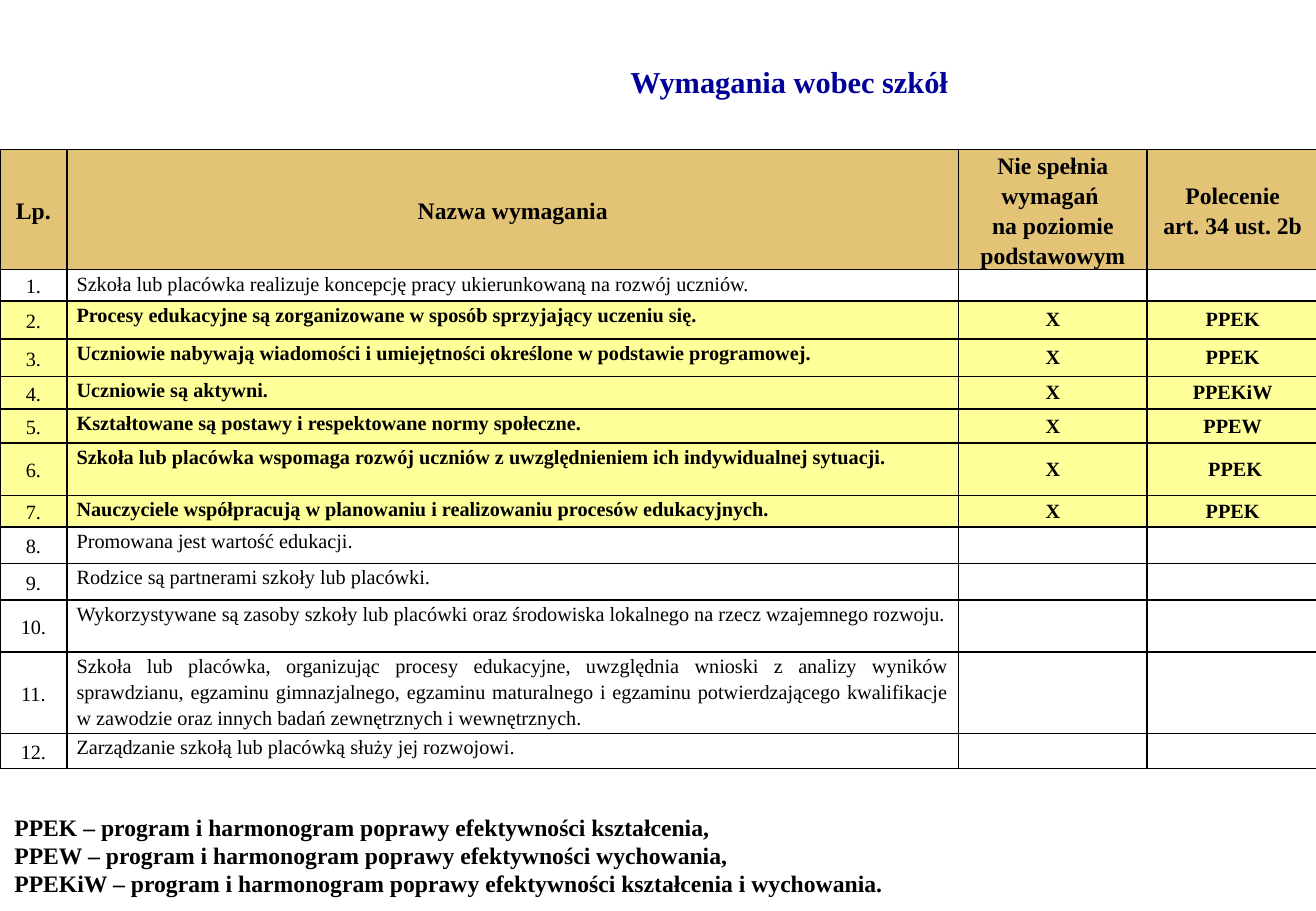
from lxml import etree
from pptx import Presentation
from pptx.dml.color import RGBColor
from pptx.enum.shapes import MSO_SHAPE
from pptx.enum.text import MSO_ANCHOR, PP_ALIGN
from pptx.oxml.ns import qn
from pptx.util import Inches, Pt

RECTANGLE = MSO_SHAPE.RECTANGLE
TOP, MIDDLE, BOTTOM = MSO_ANCHOR.TOP, MSO_ANCHOR.MIDDLE, MSO_ANCHOR.BOTTOM
LEFT, CENTER, JUSTIFY = PP_ALIGN.LEFT, PP_ALIGN.CENTER, PP_ALIGN.JUSTIFY

FONT = "Times New Roman"
HEADER_SPACING = Pt(17.75)
ROW_SPACING = Pt(15.4)
COLORS = {
    "title": "000099",
    "text": "000000",
    "border": "000000",
    "header": "E3C477",
    "failed": "FFFF99",
    "plain": "FFFFFF",
}

COLUMN_WIDTHS = [0.55, 7.34, 1.55, 1.41]
HEADER_HEIGHT = 0.99
HEADERS = [
    "Lp.",
    "Nazwa wymagania",
    "Nie spełnia wymagań \vna poziomie podstawowym",
    "Polecenie\nart. 34 ust. 2b",
]

# Row height, requirement, programme ordered when the requirement is not met
REQUIREMENTS = [
    (0.26, "Szkoła lub placówka realizuje koncepcję pracy ukierunkowaną na rozwój uczniów.", ""),
    (0.31, "Procesy edukacyjne są zorganizowane w sposób sprzyjający uczeniu się.", "PPEK"),
    (0.31, "Uczniowie nabywają wiadomości i umiejętności określone w podstawie programowej.", "PPEK"),
    (0.27, "Uczniowie są aktywni.", "PPEKiW"),
    (0.28, "Kształtowane są postawy i respektowane normy społeczne.", "PPEW"),
    (0.43, "Szkoła lub placówka wspomaga rozwój uczniów z uwzględnieniem ich "
           "indywidualnej sytuacji.", " PPEK"),
    (0.26, "Nauczyciele współpracują w planowaniu i realizowaniu procesów edukacyjnych.", "PPEK"),
    (0.30, "Promowana jest wartość edukacji.", ""),
    (0.30, "Rodzice są partnerami szkoły lub placówki.", ""),
    (0.43, "Wykorzystywane są zasoby szkoły lub placówki oraz środowiska lokalnego "
           "na rzecz wzajemnego rozwoju.", ""),
    (0.67, "Szkoła lub placówka, organizując procesy edukacyjne, uwzględnia wnioski "
           "z analizy wyników sprawdzianu, egzaminu gimnazjalnego, egzaminu maturalnego "
           "i egzaminu potwierdzającego kwalifikacje w zawodzie oraz innych badań "
           "zewnętrznych i wewnętrznych.", ""),
    (0.29, "Zarządzanie szkołą lub placówką służy jej rozwojowi.", ""),
]

LEGEND = """PPEK – program i harmonogram poprawy efektywności kształcenia,
PPEW – program i harmonogram poprawy efektywności wychowania,
PPEKiW – program i harmonogram poprawy efektywności kształcenia i wychowania."""


def color(name):
    return RGBColor.from_string(COLORS[name])


def write(text_frame, text, size, bold=True, align=CENTER, spacing=1.0, color_name="text"):
    text_frame.word_wrap = True
    text_frame.text = text
    for paragraph in text_frame.paragraphs:
        paragraph.alignment = align
        paragraph.line_spacing = spacing
        font = paragraph.font
        font.name, font.size, font.bold = FONT, Pt(size), bold
        font.color.rgb = color(color_name)


def add_borders(cell):
    properties = cell._tc.get_or_add_tcPr()
    for position, side in enumerate(("a:lnL", "a:lnR", "a:lnT", "a:lnB")):
        line = etree.Element(qn(side), w=str(Pt(1)))
        fill = etree.SubElement(line, qn("a:solidFill"))
        etree.SubElement(fill, qn("a:srgbClr"), val=COLORS["border"])
        properties.insert(position, line)


def fill_cell(cell, text, fill_name, size=12, anchor=MIDDLE, **style):
    cell.margin_left = cell.margin_right = Inches(0.08)
    cell.margin_top = cell.margin_bottom = 0
    cell.vertical_anchor = anchor
    cell.fill.solid()
    cell.fill.fore_color.rgb = color(fill_name)
    add_borders(cell)
    write(cell.text_frame, text, size, **style)
    if not text:
        # An empty cell takes its line height from the end-of-paragraph size
        paragraph = cell.text_frame.paragraphs[0]
        etree.SubElement(paragraph._p, qn("a:endParaRPr"), sz=str(size * 100))


def add_title(slide):
    box = slide.shapes.add_textbox(Inches(2.1), Inches(0.16), Inches(8.79), Inches(1.02))
    box.text_frame.vertical_anchor = MIDDLE
    write(box.text_frame, "Wymagania wobec szkół", 18, color_name="title")


def add_legend(slide):
    shape = slide.shapes.add_shape(
        RECTANGLE, Inches(0.02), Inches(5.86), Inches(10.83), Inches(1.64))
    shape.shadow.inherit = False
    shape.fill.solid()
    shape.fill.fore_color.rgb = color("plain")
    shape.line.fill.background()
    shape.text_frame.vertical_anchor = BOTTOM
    shape.text_frame.margin_bottom = Inches(0.11)
    write(shape.text_frame, LEGEND, 14, align=LEFT)


def add_requirements_table(slide):
    heights = [HEADER_HEIGHT] + [height for height, _, _ in REQUIREMENTS]
    table = slide.shapes.add_table(
        len(heights), len(COLUMN_WIDTHS), 0, Inches(1.23),
        Inches(sum(COLUMN_WIDTHS)), Inches(sum(heights))).table
    for column, width in zip(table.columns, COLUMN_WIDTHS):
        column.width = Inches(width)
    for row, height in zip(table.rows, heights):
        row.height = Inches(height)

    for index, header in enumerate(HEADERS):
        fill_cell(table.cell(0, index), header, "header", size=14, spacing=HEADER_SPACING)

    for number, (_, name, programme) in enumerate(REQUIREMENTS, start=1):
        failed = bool(programme)
        fill_name = "failed" if failed else "plain"
        number_cell, name_cell, mark_cell, programme_cell = table.rows[number].cells
        fill_cell(number_cell, f"{number}.", fill_name, bold=False, spacing=ROW_SPACING)
        fill_cell(name_cell, name, fill_name, anchor=TOP, bold=failed,
                  align=JUSTIFY, spacing=ROW_SPACING)
        fill_cell(mark_cell, "X" if failed else "", fill_name)
        fill_cell(programme_cell, programme, fill_name)


def main():
    presentation = Presentation()
    presentation.slide_width = Inches(10.83)
    presentation.slide_height = Inches(7.5)
    slide = presentation.slides.add_slide(presentation.slide_layouts[6])
    add_title(slide)
    add_legend(slide)
    add_requirements_table(slide)
    presentation.save("out.pptx")


if __name__ == "__main__":
    main()
